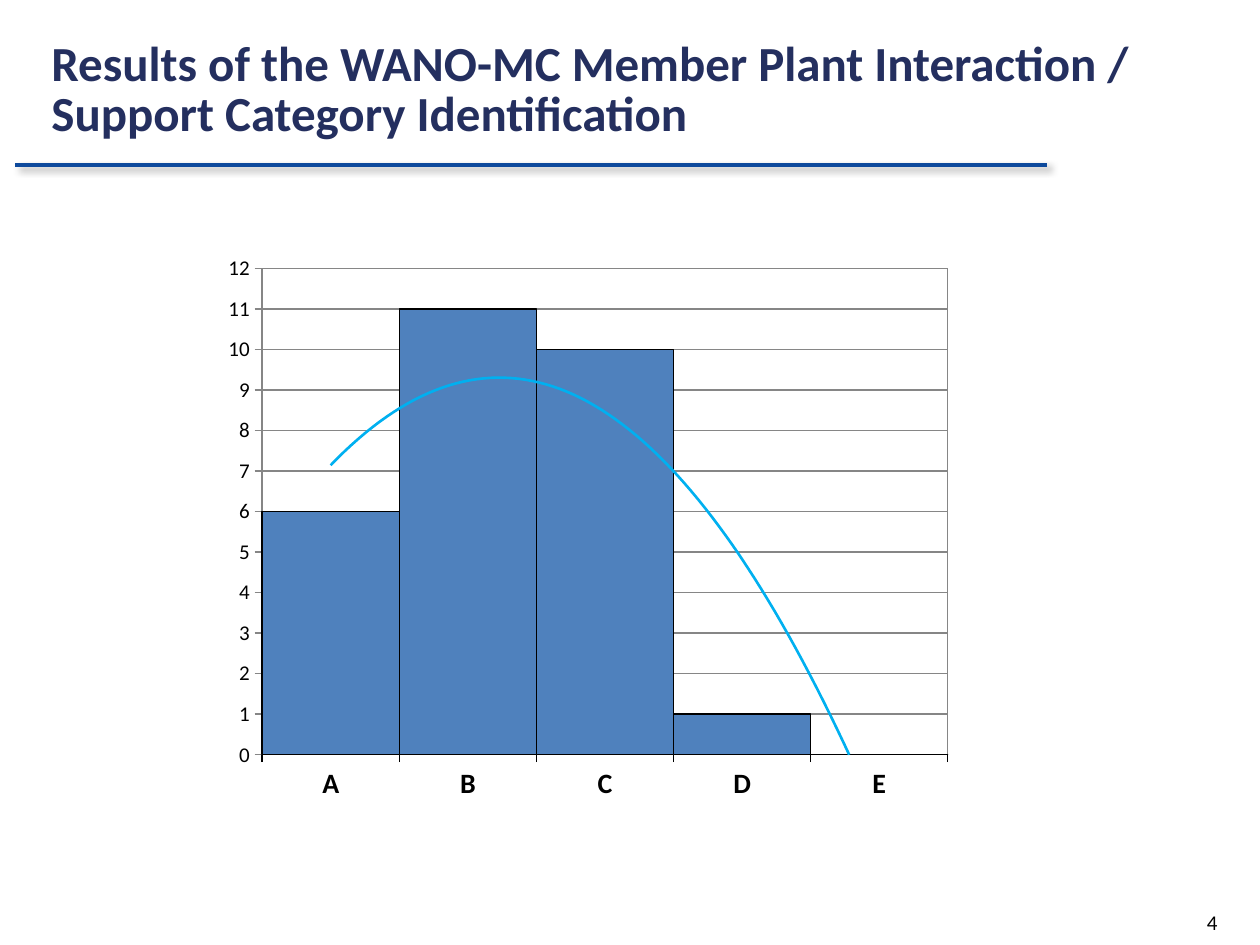
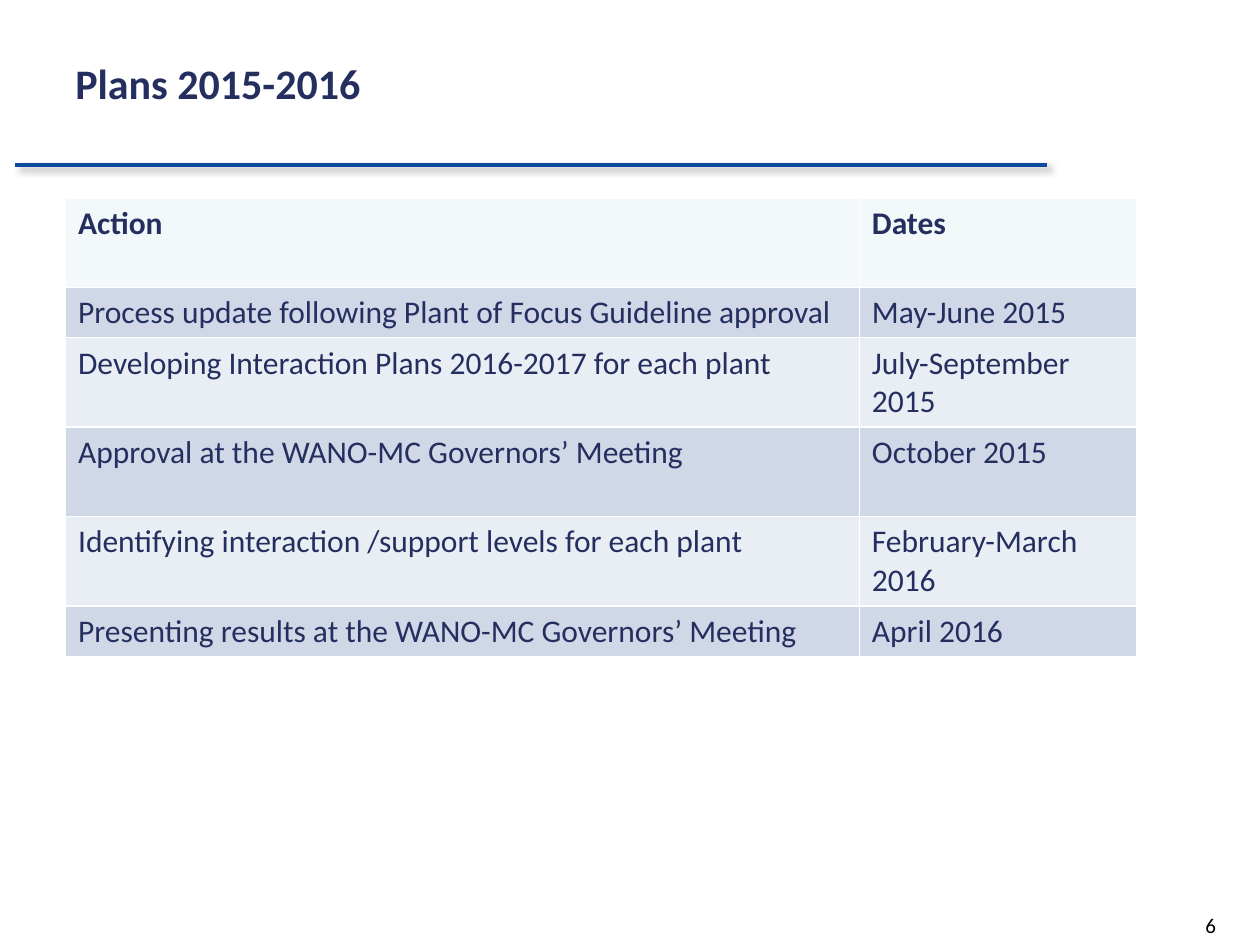
import pptx
import pptx.chart.data
import pptx.dml.color
import pptx.enum.chart
import pptx.enum.shapes
import pptx.enum.text
import pptx.oxml
import pptx.oxml.ns
import pptx.util

Inches = pptx.util.Inches
Pt = pptx.util.Pt
FONT = "Calibri"
COLORS = {
    "title": "242F5F", "rule": "0D499C", "text": "000000", "grid": "868686",
    "bar": "4F81BD", "trend": "00B0F0", "white": "FFFFFF",
    "header": "F3F9FA", "odd": "D0D8E8", "even": "E9EDF4",
}

CHART_SLIDE = {
    "title": "Results of the WANO-MC Member Plant Interaction / Support Category Identification",
    "title_box": (0.31, 0.14, 9.69, 1.17), "title_size": 28, "title_spacing": 0.85,
    "number": "4", "number_box": (7.17, 7.15, 2.59, 0.34),
}
PLANS_SLIDE = {
    "title": "Plans 2015-2016",
    "title_box": (0.5, 0, 9, 1.31), "title_size": 24, "title_spacing": 1.0,
    "number": "6", "number_box": (8.93, 7.19, 0.82, 0.31),
}
CATEGORY_COUNTS = {"A": 6, "B": 11, "C": 10, "D": 1, "E": 0}
CHART_BOX = (1.7, 1.95, 5.94, 4.51)
PLOT_BOX = (2.08, 2.13, 5.44, 3.86)
PLANS = [
    ("Action", "Dates"),
    ("Process update following Plant of Focus Guideline approval", "May-June 2015"),
    ("Developing Interaction Plans 2016-2017 for each plant", "July-September 2015"),
    ("Approval at the WANO-MC Governors’ Meeting", "October 2015"),
    ("Identifying interaction /support levels for each plant", "February-March 2016"),
    ("Presenting results at the WANO-MC Governors’ Meeting", "April 2016"),
]
COL_WIDTHS = (6.3, 2.2)
ONE_LINE, TWO_LINES = 0.4, 0.71
ROW_HEIGHTS = (TWO_LINES, ONE_LINE, TWO_LINES, TWO_LINES, TWO_LINES, ONE_LINE)


def rgb(name):
    return pptx.dml.color.RGBColor.from_string(COLORS[name])


def xml(tag, body="", attrs=""):
    ns = pptx.oxml.ns.nsdecls("a", "c")
    return pptx.oxml.parse_xml(f"<{tag} {ns} {attrs}>{body}</{tag}>")


def solid(name):
    return f'<a:solidFill><a:srgbClr val="{COLORS[name]}"/></a:solidFill>'


def set_font(font, size, color, bold=False):
    font.name, font.size, font.bold = FONT, Pt(size), bold
    font.color.rgb = rgb(color)


def set_line(line, color, width):
    line.color.rgb = rgb(color)
    line.width = Pt(width)


def add_text(slide, box, text, size, color, bold=False, align=None, spacing=None):
    tf = slide.shapes.add_textbox(*map(Inches, box)).text_frame
    tf.word_wrap = True
    tf.vertical_anchor = pptx.enum.text.MSO_ANCHOR.MIDDLE
    p = tf.paragraphs[0]
    p.text = text
    p.alignment, p.line_spacing = align, spacing
    set_font(p.font, size, color, bold)


def add_slide(prs, content):
    slide = prs.slides.add_slide(prs.slide_layouts[6])
    rule = slide.shapes.add_connector(
        pptx.enum.shapes.MSO_CONNECTOR.STRAIGHT,
        Inches(0.12), Inches(1.31), Inches(8.31), Inches(1.31))
    set_line(rule.line, "rule", 2)
    shadow = (f'<a:outerShdw blurRad="{Pt(4)}" dist="{Pt(3)}" dir="2700000" rotWithShape="0">'
              f'<a:srgbClr val="{COLORS["text"]}"><a:alpha val="40000"/></a:srgbClr></a:outerShdw>')
    rule._element.spPr.append(xml("a:effectLst", shadow))
    add_text(slide, content["title_box"], content["title"], content["title_size"],
             "title", bold=True, spacing=content["title_spacing"])
    add_text(slide, content["number_box"], content["number"], 12, "text",
             align=pptx.enum.text.PP_ALIGN.RIGHT)
    return slide


def style_axis(axis, size, bold, color):
    axis.major_tick_mark = pptx.enum.chart.XL_TICK_MARK.OUTSIDE
    axis.minor_tick_mark = pptx.enum.chart.XL_TICK_MARK.NONE
    set_font(axis.tick_labels.font, size, "text", bold)
    set_line(axis.format.line, color, 0.75)


def place_plot(chart):
    plot_area = chart._chartSpace.chart.plotArea
    for layout in plot_area.findall(pptx.oxml.ns.qn("c:layout")):
        plot_area.remove(layout)
    left, top, width, height = CHART_BOX
    x, y, w, h = PLOT_BOX
    parts = {"x": (x - left) / width, "y": (y - top) / height, "w": w / width, "h": h / height}
    body = '<c:layoutTarget val="inner"/><c:xMode val="edge"/><c:yMode val="edge"/>'
    body += "".join(f'<c:{key} val="{value:.3f}"/>' for key, value in parts.items())
    plot_area.insert(0, xml("c:layout", f"<c:manualLayout>{body}</c:manualLayout>"))
    border = f'<a:noFill/><a:ln w="{Pt(0.75)}">{solid("grid")}</a:ln>'
    plot_area.append(xml("c:spPr", border))


def add_category_chart(slide):
    data = pptx.chart.data.CategoryChartData()
    data.categories = list(CATEGORY_COUNTS)
    data.add_series("Series 1", list(CATEGORY_COUNTS.values()))
    chart = slide.shapes.add_chart(
        pptx.enum.chart.XL_CHART_TYPE.COLUMN_CLUSTERED, *map(Inches, CHART_BOX), data).chart
    chart.has_legend = chart.has_title = False
    set_font(chart.font, 10, "text")
    plot = chart.plots[0]
    plot.gap_width = 0
    plot.vary_by_categories = False
    series = plot.series[0]
    series.format.fill.solid()
    series.format.fill.fore_color.rgb = rgb("bar")
    set_line(series.format.line, "text", 0.75)

    style_axis(chart.category_axis, 16, True, "text")
    axis = chart.value_axis
    style_axis(axis, 12, False, "grid")
    axis.minimum_scale, axis.maximum_scale, axis.major_unit = 0, 12, 1
    axis.has_major_gridlines = True
    set_line(axis.major_gridlines.format.line, "grid", 0.75)

    trend = (f'<c:spPr><a:ln w="{Pt(1.5)}">{solid("trend")}</a:ln></c:spPr>'
             '<c:trendlineType val="poly"/><c:order val="2"/>'
             '<c:dispRSqr val="0"/><c:dispEq val="0"/>')
    series._element.find(pptx.oxml.ns.qn("c:cat")).addprevious(xml("c:trendline", trend))
    place_plot(chart)


def add_plans_table(slide):
    table = slide.shapes.add_table(
        len(PLANS), len(COL_WIDTHS), Inches(0.52), Inches(1.57),
        Inches(sum(COL_WIDTHS)), Inches(sum(ROW_HEIGHTS))).table
    for column, width in zip(table.columns, COL_WIDTHS):
        column.width = Inches(width)
    for i, (row, height) in enumerate(zip(table.rows, ROW_HEIGHTS)):
        row.height = Inches(height)
        fill = "header" if i == 0 else "odd" if i % 2 else "even"
        for cell, text in zip(row.cells, PLANS[i]):
            cell.fill.solid()
            cell.fill.fore_color.rgb = rgb(fill)
            p = cell.text_frame.paragraphs[0]
            p.text = text
            set_font(p.font, 18, "title", bold=i == 0)
            tc_pr = cell._tc.get_or_add_tcPr()
            for k, side in enumerate("LRTB"):
                tc_pr.insert(k, xml(f"a:ln{side}", solid("white"), f'w="{Pt(1)}"'))


def main():
    prs = pptx.Presentation()
    prs.slide_width, prs.slide_height = Inches(10), Inches(7.5)
    add_category_chart(add_slide(prs, CHART_SLIDE))
    add_plans_table(add_slide(prs, PLANS_SLIDE))
    prs.save("out.pptx")


if __name__ == "__main__":
    main()
